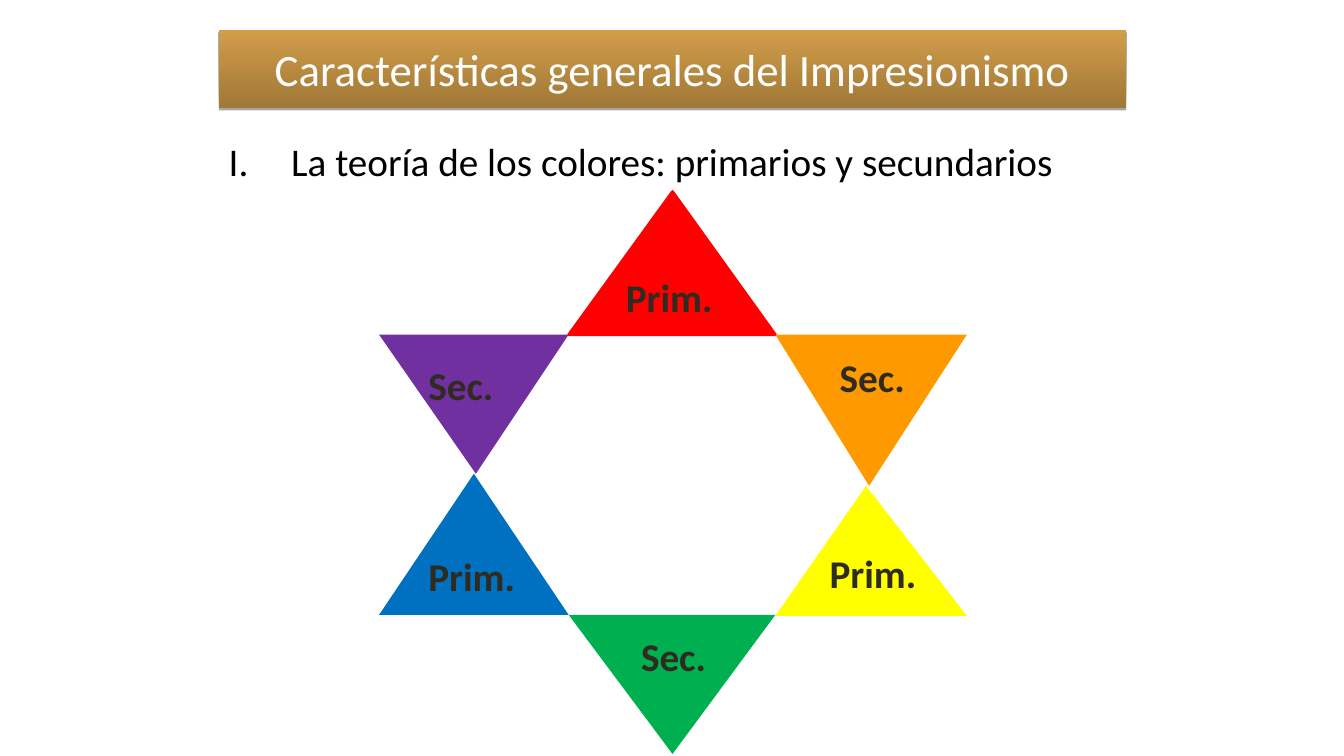
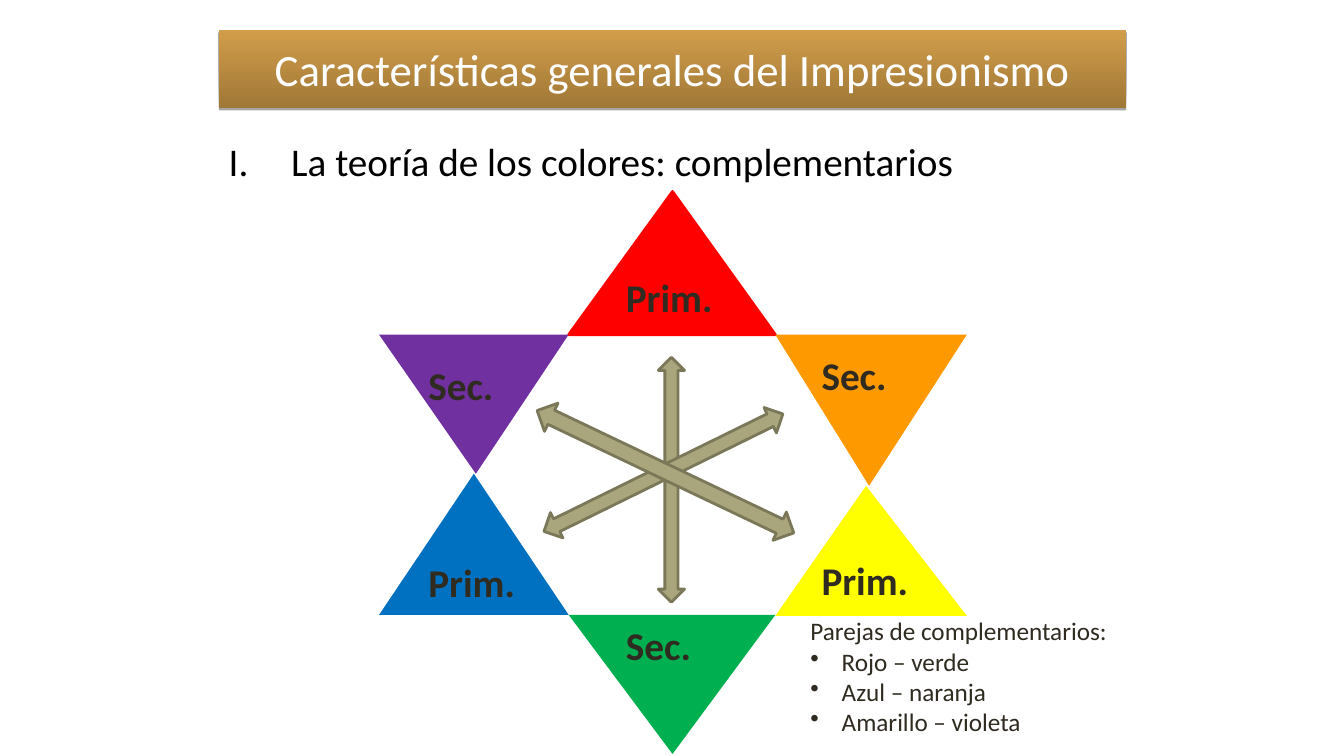
import pptx
import pptx.dml.color
import pptx.enum.shapes
import pptx.enum.text
import pptx.oxml.ns
import pptx.util
from lxml import etree

Inches = pptx.util.Inches
Pt = pptx.util.Pt
RGBColor = pptx.dml.color.RGBColor
qn = pptx.oxml.ns.qn

FONT = "Calibri"
WHITE = RGBColor(0xFF, 0xFF, 0xFF)
BLACK = RGBColor(0x00, 0x00, 0x00)
INK = RGBColor(0x2F, 0x2B, 0x20)
BAND_DARK = RGBColor(0xA0, 0x78, 0x37)
BAND_LIGHT = RGBColor(0xD1, 0x9D, 0x4A)
ARROW_FILL = RGBColor(0xA9, 0xA5, 0x7C)
ARROW_EDGE = RGBColor(0x7B, 0x78, 0x59)
RED = RGBColor(0xFF, 0x00, 0x00)
VIOLET = RGBColor(0x70, 0x30, 0xA0)
GREEN = RGBColor(0x00, 0xB0, 0x50)
ORANGE = RGBColor(0xFF, 0x99, 0x00)
YELLOW = RGBColor(0xFF, 0xFF, 0x00)
BLUE = RGBColor(0x00, 0x70, 0xC0)

TITLE = "Características generales del Impresionismo"
TITLE_BOX = (2.17, 0.3, 9, 0.77)
HEADING_BOX = (2.17, 1.31, 9, 0.6)
STAR_ORIGIN = (3.76, 1.9)
PAIRS_BOX = (7.94, 6.06, 3.73, 1.31)
LABEL_SIZE = (1.2, 0.57)

# Star geometry, measured from the star's top left corner
LEFT, INNER_LEFT, CENTRE, INNER_RIGHT, RIGHT = 0, 1.88, 2.91, 3.93, 5.83
TOP, UPPER, LOWER, BOTTOM = 0, 1.42, 4.2, 5.58
# Colour, base start, base end, base height, apex
TRIANGLES = [
    (RED, INNER_LEFT, INNER_RIGHT, UPPER, (CENTRE, TOP)),
    (VIOLET, LEFT, INNER_LEFT, UPPER, (0.96, 2.8)),
    (GREEN, INNER_LEFT, INNER_RIGHT, LOWER, (CENTRE, BOTTOM)),
    (ORANGE, INNER_RIGHT, RIGHT, UPPER, (4.86, 2.92)),
    (YELLOW, INNER_RIGHT, RIGHT, LOWER + 0.01, (4.83, 2.92)),
    (BLUE, LEFT, INNER_LEFT, LOWER, (0.94, 2.8)),
]
# Centre, width, length, rotation
ARROWS = [
    ((2.9, 2.86), 0.26, 2.43, 0),
    ((2.82, 2.79), 0.28, 2.64, 63.8),
    ((2.84, 2.78), 0.31, 2.82, 115.5),
]

# Label positions, measured from the star's top left corner
PRIMARY_LABELS = [
    ("Prim.", 2.35, 0.76), ("Sec.", 0.39, 1.64), ("Sec.", 4.47, 1.56),
    ("Sec.", 2.5, 4.32), ("Prim.", 0.39, 3.53), ("Prim.", 4.37, 3.5),
]
COMPLEMENTARY_LABELS = [
    ("Prim.", 2.35, 0.76), ("Sec.", 0.39, 1.64), ("Sec.", 4.29, 1.54),
    ("Sec.", 2.35, 4.21), ("Prim.", 0.39, 3.59), ("Prim.", 4.29, 3.57),
]
PAIRS = ["Rojo – verde", "Azul – naranja", "Amarillo – violeta"]


def inches(box):
    return [Inches(length) for length in box]


def style_text(paragraph, size, color, bold=False):
    for run in paragraph.runs:
        run.font.name = FONT
        run.font.size = Pt(size)
        run.font.bold = bold
        run.font.color.rgb = color


def set_marker(paragraph, indent, tag, **attributes):
    """Give a paragraph a hanging bullet or number."""
    properties = paragraph._p.get_or_add_pPr()
    properties.set("marL", str(Inches(indent)))
    properties.set("indent", str(-Inches(indent)))
    etree.SubElement(properties, qn(tag), attributes)


def add_text_box(slide, box):
    frame = slide.shapes.add_textbox(*inches(box)).text_frame
    frame.word_wrap = True
    return frame


def add_title_band(slide, box):
    band = slide.shapes.add_shape(
        pptx.enum.shapes.MSO_SHAPE.RECTANGLE, *inches(box))
    band.fill.gradient()
    band.fill.gradient_angle = 90
    for stop, color in zip(band.fill.gradient_stops, (BAND_DARK, BAND_LIGHT)):
        stop.color.rgb = color
    band.line.fill.background()
    band.shadow.inherit = False
    effects = band.element.spPr.find(qn("a:effectLst"))
    shadow = etree.SubElement(effects, qn("a:outerShdw"), blurRad="0",
                              dist=str(Pt(1.8)), dir="5400000", rotWithShape="0")
    shade = etree.SubElement(shadow, qn("a:srgbClr"), val=str(BLACK))
    etree.SubElement(shade, qn("a:alpha"), val="35000")

    frame = band.text_frame
    frame.word_wrap = True
    frame.vertical_anchor = pptx.enum.text.MSO_ANCHOR.MIDDLE
    frame.text = TITLE
    frame.paragraphs[0].alignment = pptx.enum.text.PP_ALIGN.CENTER
    style_text(frame.paragraphs[0], 32, WHITE)


def add_heading(slide, box, text):
    heading = add_text_box(slide, box).paragraphs[0]
    heading.text = text
    set_marker(heading, 0.62, "a:buAutoNum", type="romanUcPeriod")
    style_text(heading, 28, BLACK)


def add_star(slide, origin, labels):
    """Draw the six colour triangles and their labels."""
    left, top = origin
    for color, start, end, base, (apex_x, apex_y) in TRIANGLES:
        corners = [(start, base), (apex_x, apex_y), (end, base)]
        points = [(Inches(left + x), Inches(top + y)) for x, y in corners]
        builder = slide.shapes.build_freeform(*points[0])
        builder.add_line_segments(points[1:], close=True)
        triangle = builder.convert_to_shape()
        triangle.shadow.inherit = False
        triangle.fill.solid()
        triangle.fill.fore_color.rgb = color
        if color == RED:
            triangle.line.color.rgb = color
            triangle.line.width = Pt(2)
        else:
            triangle.line.fill.background()
    for text, x, y in labels:
        frame = add_text_box(slide, (left + x, top + y, *LABEL_SIZE))
        frame.text = text
        style_text(frame.paragraphs[0], 28, INK, bold=True)


def add_arrows(slide, origin):
    """Join the complementary colours across the star."""
    left, top = origin
    for (x, y), width, length, rotation in ARROWS:
        box = (left + x - width / 2, top + y - length / 2, width, length)
        arrow = slide.shapes.add_shape(
            pptx.enum.shapes.MSO_SHAPE.UP_DOWN_ARROW, *inches(box))
        arrow.rotation = rotation
        arrow.shadow.inherit = False
        arrow.fill.solid()
        arrow.fill.fore_color.rgb = ARROW_FILL
        arrow.line.color.rgb = ARROW_EDGE
        arrow.line.width = Pt(2)


def add_pairs(slide, box):
    frame = add_text_box(slide, box)
    frame.text = "Parejas de complementarios:"
    for pair in PAIRS:
        item = frame.add_paragraph()
        item.text = pair
        set_marker(item, 0.31, "a:buChar", char="•")
    for paragraph in frame.paragraphs:
        style_text(paragraph, 18, INK)


def add_theory_slide(deck, heading, labels):
    slide = deck.slides.add_slide(deck.slide_layouts[6])
    add_title_band(slide, TITLE_BOX)
    add_heading(slide, HEADING_BOX, heading)
    add_star(slide, STAR_ORIGIN, labels)
    return slide


def main():
    deck = pptx.Presentation()
    deck.slide_width, deck.slide_height = inches((13.33, 7.5))
    add_theory_slide(deck, "La teoría de los colores: primarios y secundarios",
                     PRIMARY_LABELS)
    complementary = add_theory_slide(
        deck, "La teoría de los colores: complementarios", COMPLEMENTARY_LABELS)
    add_arrows(complementary, STAR_ORIGIN)
    add_pairs(complementary, PAIRS_BOX)
    deck.save("out.pptx")


if __name__ == "__main__":
    main()
